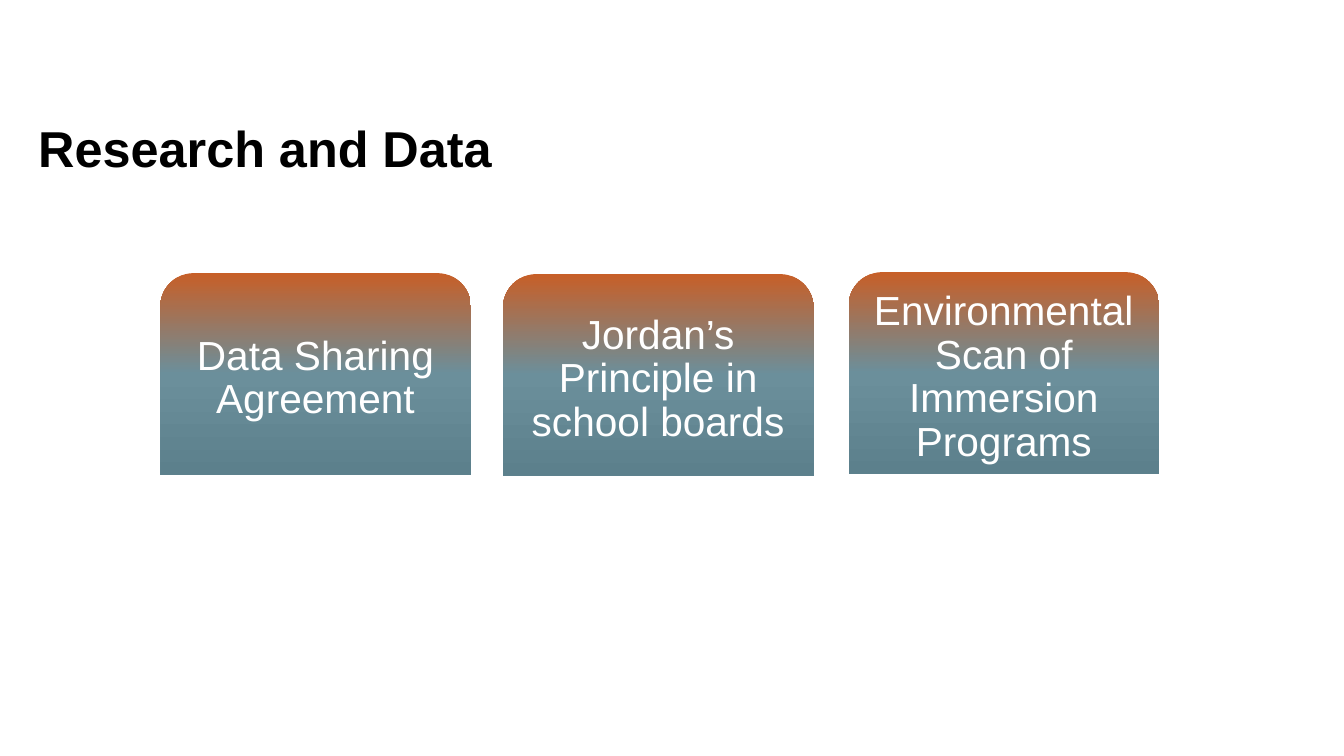
from lxml import etree
from pptx import Presentation
from pptx.dml.color import RGBColor
from pptx.enum import shapes, text
from pptx.oxml import ns
from pptx.util import Pt

# Content
TITLE = "Research and Data"
CARDS = [  # left, top, label
    (114.5, 195.1, "Data Sharing Agreement"),
    (359.3, 195.8, "Jordan’s Principle in school boards"),
    (606.2, 194.4, "Environmental Scan of Immersion Programs"),
]
CARD_W, CARD_H = 221.8, 144
STOPS = [(0, "C75F28"), (50, "6B8F9B"), (100, "5C808C")]


def color(code):
    return RGBColor.from_string(code)


def write(frame, words, size, code, align, bold=False):
    frame.word_wrap = True
    para = frame.paragraphs[0]
    para.alignment = align
    para.line_spacing = 0.9
    run = para.add_run()
    run.text = words
    font = run.font
    font.name, font.size, font.bold = "Arial", Pt(size), bold
    font.color.rgb = color(code)


def shade(shape):
    """Fill from top to bottom through three stops."""
    shape.fill.gradient()
    grad = shape.fill._xPr.find(ns.qn("a:gradFill"))
    for part in list(grad):
        grad.remove(part)
    stops = etree.SubElement(grad, ns.qn("a:gsLst"))
    for place, code in STOPS:
        stop = etree.SubElement(stops, ns.qn("a:gs"), pos=str(place * 1000))
        etree.SubElement(stop, ns.qn("a:srgbClr"), val=code)
    etree.SubElement(grad, ns.qn("a:lin"), ang="5400000", scaled="0")


def main():
    deck = Presentation()
    deck.slide_width, deck.slide_height = Pt(960), Pt(540)
    slide = deck.slides.add_slide(deck.slide_layouts[6])

    # Title
    box = slide.shapes.add_textbox(Pt(20.2), Pt(85), Pt(624.2), Pt(61.2))
    write(box.text_frame, TITLE, 36, "000000", text.PP_ALIGN.LEFT, True)

    # Cards
    for left, top, label in CARDS:
        card = slide.shapes.add_shape(
            shapes.MSO_SHAPE.ROUND_2_SAME_RECTANGLE,
            Pt(left), Pt(top), Pt(CARD_W), Pt(CARD_H))
        card.shadow.inherit = False
        card.line.fill.background()
        shade(card)
        frame = card.text_frame
        frame.vertical_anchor = text.MSO_ANCHOR.MIDDLE
        frame.margin_left = frame.margin_right = Pt(8.6)
        frame.margin_top = frame.margin_bottom = Pt(2.9)
        write(frame, label, 29, "FFFFFF", text.PP_ALIGN.CENTER)

    deck.save("out.pptx")


if __name__ == "__main__":
    main()
